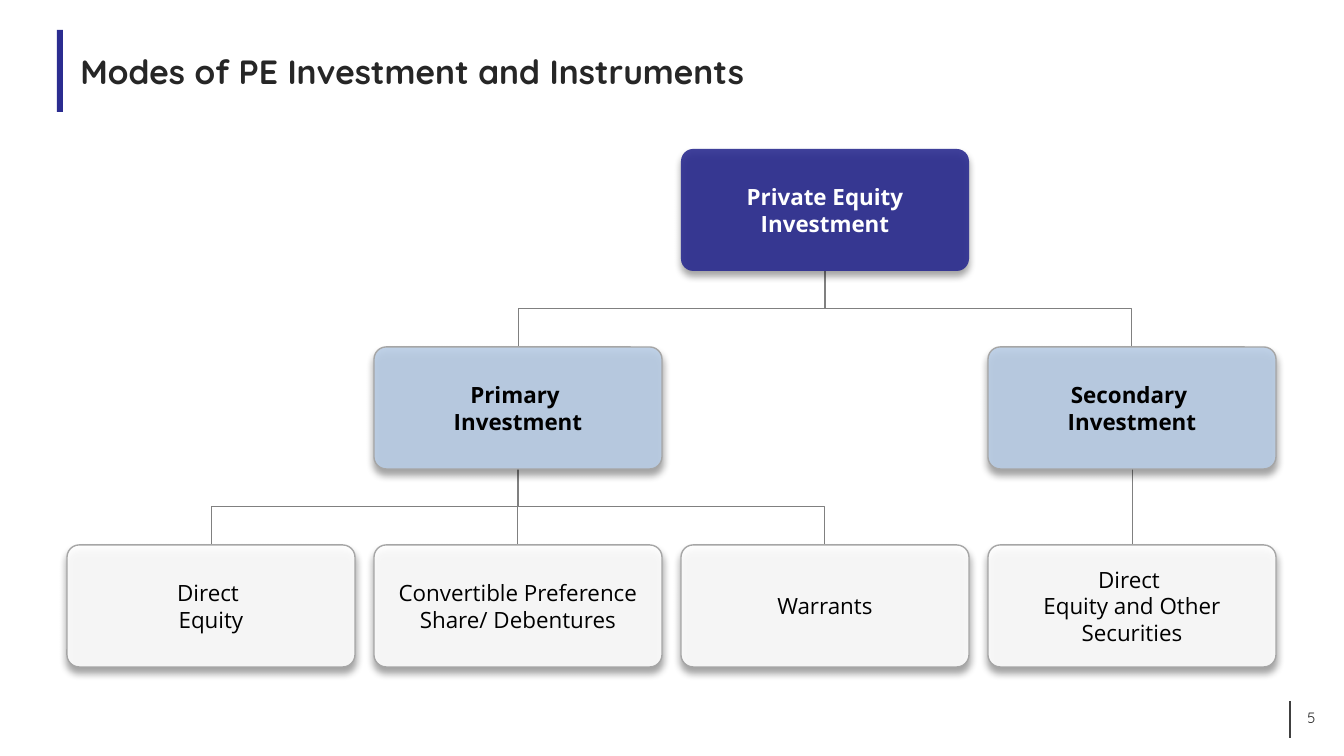
import pptx
import pptx.util
import pptx.dml.color
import pptx.enum.shapes
import pptx.enum.text
import pptx.oxml
import pptx.oxml.ns

RGBColor = pptx.dml.color.RGBColor
SHAPE = pptx.enum.shapes.MSO_SHAPE
CONNECTOR = pptx.enum.shapes.MSO_CONNECTOR
ALIGN = pptx.enum.text.PP_ALIGN
MIDDLE = pptx.enum.text.MSO_ANCHOR.MIDDLE

NAVY = RGBColor(0x2B, 0x2C, 0x90)
PALE_BLUE = RGBColor(0xB9, 0xCD, 0xE5)
WHITE = RGBColor(0xFF, 0xFF, 0xFF)
BLACK = RGBColor(0x00, 0x00, 0x00)
INK = RGBColor(0x26, 0x26, 0x26)
RULE = RGBColor(0x40, 0x40, 0x40)
LINK = RGBColor(0x80, 0x80, 0x80)
BORDER = RGBColor(0xA6, 0xA6, 0xA6)

HEADING_FONT, BODY_FONT = "Quicksand", "Open Sans"
LEFT, TOP = 67, 149
COLUMN_STEP, ROW_STEP = 307, 198
BOX_W, BOX_H = 288, 122

A_NS = pptx.oxml.ns.nsdecls("a")
SHADOW = (
    f'<a:effectLst {A_NS}><a:outerShdw blurRad="50800" dist="38100" '
    'dir="5400000" algn="t" rotWithShape="0"><a:srgbClr val="000000">'
    '<a:alpha val="40000"/></a:srgbClr></a:outerShdw></a:effectLst>'
)


def px(n):
    return pptx.util.Emu(round(n * 914400 / 134.4))


class Deck:
    def __init__(self, prs):
        self.prs = prs
        self.s = prs.slides.add_slide(prs.slide_layouts[5])

    def fill_text(self, tf, text, size, font, color, align, bold=False):
        tf.word_wrap = True
        tf.auto_size = pptx.enum.text.MSO_AUTO_SIZE.NONE
        tf.vertical_anchor = MIDDLE
        p = tf.paragraphs[0]
        p.text = text
        p.alignment = align
        p.font.size = pptx.util.Pt(size)
        p.font.name = font
        p.font.bold = bold
        p.font.color.rgb = color

    def title(self, text, x, y, w, h):
        sp = self.s.shapes.title
        sp.left, sp.top, sp.width, sp.height = map(px, (x, y, w, h))
        self.fill_text(sp.text_frame, text, 18, HEADING_FONT, INK, ALIGN.LEFT, True)

    def text(self, text, x, y, w, h, size):
        sp = self.s.shapes.add_textbox(*map(px, (x, y, w, h)))
        self.fill_text(sp.text_frame, text, size, HEADING_FONT, INK, ALIGN.RIGHT)

    def bar(self, x, y, w, h, color):
        sp = self.s.shapes.add_shape(SHAPE.RECTANGLE, *map(px, (x, y, w, h)))
        sp.shadow.inherit = False
        sp.fill.solid()
        sp.fill.fore_color.rgb = color
        sp.line.fill.background()

    def line(self, x1, y1, x2, y2, color, width, kind=CONNECTOR.STRAIGHT):
        sp = self.s.shapes.add_connector(kind, *map(px, (x1, y1, x2, y2)))
        sp.line.color.rgb = color
        sp.line.width = pptx.util.Pt(width)
        sp._element.spPr.append(pptx.oxml.parse_xml(f"<a:effectLst {A_NS}/>"))
        return sp

    def branch(self, parent, child):
        x1, y1 = parent[0] + BOX_W / 2, parent[1] + BOX_H
        x2, y2 = child[0] + BOX_W / 2, child[1]
        if x1 == x2:
            self.line(x1, y1, x2, y2, LINK, 0.5)
            return
        cx, cy = (x1 + x2) / 2, (y1 + y2) / 2
        to_right = x2 > x1
        half_drop = (y2 - y1) / 2 * (-1 if to_right else 1)
        half_span = abs(x2 - x1) / 2
        sp = self.line(cx - half_drop, cy - half_span, cx + half_drop,
                       cy + half_span, LINK, 0.5, CONNECTOR.ELBOW)
        xfrm = sp._element.spPr.find(pptx.oxml.ns.qn("a:xfrm"))
        xfrm.set("rot", str((270 if to_right else 90) * 60000))

    def box(self, text, x, y, fill, color, border, bold):
        sp = self.s.shapes.add_shape(SHAPE.ROUNDED_RECTANGLE,
                                     *map(px, (x, y, BOX_W, BOX_H)))
        sp.adjustments[0] = 0.1
        sp.fill.solid()
        sp.fill.fore_color.rgb = fill
        srgb = sp._element.spPr.find(".//" + pptx.oxml.ns.qn("a:srgbClr"))
        srgb.append(pptx.oxml.parse_xml(f'<a:alpha {A_NS} val="90000"/>'))
        if border:
            sp.line.color.rgb = border
            sp.line.width = pptx.util.Pt(0.75)
        else:
            sp.line.fill.background()
        sp._element.spPr.append(pptx.oxml.parse_xml(SHADOW))
        tf = sp.text_frame
        tf.margin_left = tf.margin_right = px(9)
        tf.margin_top = tf.margin_bottom = px(9)
        self.fill_text(tf, text, 12, BODY_FONT, color, ALIGN.CENTER, bold)


def main():
    prs = pptx.Presentation()
    prs.slide_width, prs.slide_height = px(1344), px(756)
    deck = Deck(prs)
    deck.bar(57, 30, 6, 82, NAVY)
    deck.line(1290, 701, 1290, 738, RULE, 0.75)
    deck.title("Modes of PE Investment and Instruments", 67, 30, 1210, 82)

    levels = [(NAVY, WHITE, None, True),
              (PALE_BLUE, BLACK, BORDER, True),
              (WHITE, BLACK, BORDER, False)]
    nodes = [
        ("Private Equity Investment", 2, 0, None),
        ("Primary \vInvestment", 1, 1, 0),
        ("Secondary \vInvestment", 3, 1, 0),
        ("Direct \vEquity", 0, 2, 1),
        ("Convertible Preference Share/ Debentures", 1, 2, 1),
        ("Warrants", 2, 2, 1),
        ("Direct \vEquity and Other Securities", 3, 2, 2),
    ]
    corners = [(LEFT + column * COLUMN_STEP, TOP + row * ROW_STEP)
               for _, column, row, _ in nodes]
    for corner, (_, _, _, parent) in zip(corners, nodes):
        if parent is not None:
            deck.branch(corners[parent], corner)
    for (x, y), (text, _, row, _) in zip(corners, nodes):
        deck.box(text, x, y, *levels[row])

    deck.text("5", 1016, 698, 313, 40, 8)
    prs.save("out.pptx")


if __name__ == "__main__":
    main()
